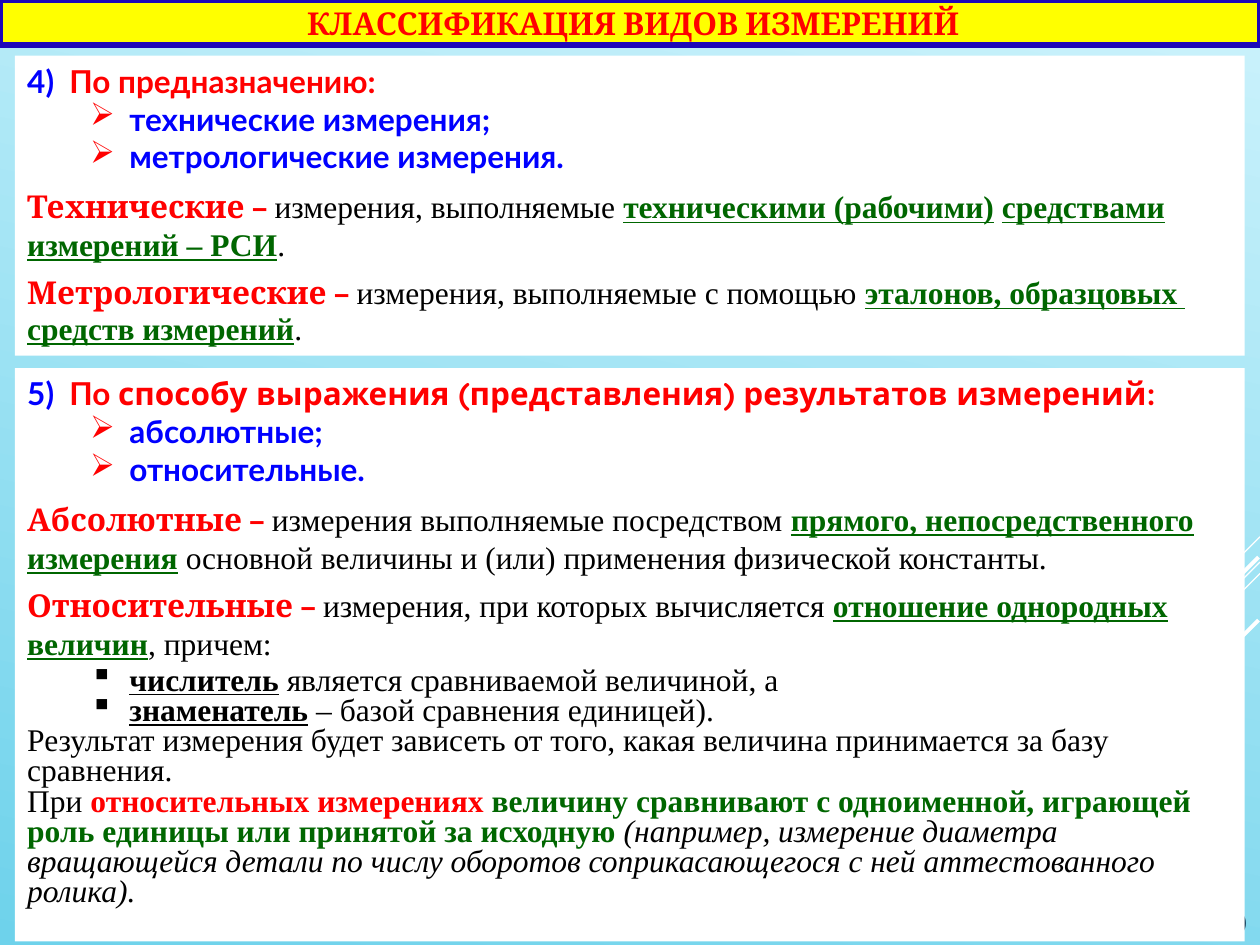
from dataclasses import dataclass
from typing import Optional

from lxml.etree import SubElement
from pptx import Presentation
from pptx.dml.color import RGBColor
from pptx.enum.shapes import MSO_CONNECTOR as Connector, MSO_SHAPE as Shape
from pptx.enum.text import MSO_ANCHOR as Anchor, MSO_AUTO_SIZE as AutoSize, PP_ALIGN as Align
from pptx.oxml.ns import qn
from pptx.util import Cm, Pt

COLORS = {
    "sky_light": "C8F1FB", "sky_deep": "6ED2EB", "white": "FFFFFF", "black": "000000",
    "yellow": "FFFF00", "navy": "1D08B8", "red": "FF0000", "blue": "0000FF",
    "green": "006600", "ink": "0A304A",
}
SERIF = "Times New Roman"


@dataclass(frozen=True)
class Style:
    font: str
    color: str
    bold: bool = False
    underline: bool = False
    italic: bool = False
    size: float = 18


@dataclass(frozen=True)
class Para:
    runs: tuple
    bullet: Optional[str] = None
    bullet_color: Optional[str] = None
    align: Align = Align.LEFT
    spacing: Optional[float] = None
    before: float = 0
    after: float = 0


@dataclass(frozen=True)
class Panel:
    top: float
    height: float
    paras: tuple


@dataclass(frozen=True)
class Ray:
    x1: float
    y1: float
    x2: float
    y2: float
    width: float


NUMBER = Style("Lato", "blue", bold=True)
HEADING = Style("Lato", "red", bold=True)
HEADING_WIDE = Style("Quicksand", "red", bold=True)
TERM = Style("Cambria", "red", bold=True)
BODY = Style(SERIF, "black")
KEY = Style(SERIF, "green", bold=True, underline=True)
KEY_PLAIN = Style(SERIF, "green", bold=True)
PART = Style(SERIF, "black", bold=True, underline=True)
ACCENT = Style(SERIF, "red", bold=True)
EXAMPLE = Style(SERIF, "black", italic=True)
PAGE = Style("Quicksand", "ink", size=16)


def kind(text: str) -> Para:
    """Return an arrow-bulleted kind of measurement."""
    return Para(((text, NUMBER),), bullet="➢", bullet_color="red")


def definition(*runs: tuple, before: float = 3, align: Align = Align.LEFT) -> Para:
    """Return a definition paragraph."""
    return Para(runs, before=before, after=3, align=align)


def tight(*runs: tuple, bullet: Optional[str] = None, align: Align = Align.LEFT) -> Para:
    """Return a paragraph with reduced line spacing."""
    return Para(runs, bullet=bullet, align=align, spacing=0.8)


RAYS = (
    Ray(25.4, 10.82, 23.29, 12.93, 0.75),
    Ray(25.4, 11.33, 18.54, 18.21, 0.75),
    Ray(25.4, 11.56, 21.03, 15.93, 0.75),
    Ray(25.37, 11.23, 21.39, 15.21, 2.25),
    Ray(25.37, 12.5, 22.48, 15.39, 2.25),
)
PANELS = (
    Panel(1.12, 6.05, (
        Para((("4)\u00a0\u00a0", NUMBER), ("По предназначению:", HEADING))),
        kind("технические измерения;"),
        kind("метрологические измерения."),
        definition(("Технические – ", TERM), ("измерения, выполняемые ", BODY),
                   ("техническими (рабочими)", KEY), (" ", KEY_PLAIN),
                   ("средствами измерений – РСИ", KEY), (".", BODY), before=7),
        definition(("Метрологические – ", TERM), ("измерения, выполняемые с помощью ", BODY),
                   ("эталонов, образцовых ", KEY), align=Align.JUSTIFY),
        tight(("средств измерений", KEY), (".", BODY), align=Align.JUSTIFY),
    )),
    Panel(7.42, 11.56, (
        Para((("5)\u00a0\u00a0", NUMBER), ("По ", HEADING),
              ("способу выражения (представления) результатов измерений", HEADING_WIDE),
              (":", HEADING))),
        kind("абсолютные;"),
        kind("относительные."),
        definition(("Абсолютные – ", TERM), ("измерения выполняемые посредством ", BODY),
                   ("прямого, непосредственного измерения", KEY), (" ", KEY_PLAIN),
                   ("основной величины и (или) применения физической константы.", BODY), before=7),
        definition(("Относительные – ", TERM), ("измерения, при которых вычисляется ", BODY),
                   ("отношение однородных величин", KEY), (", причем:", BODY)),
        tight(("числитель", PART), (" является сравниваемой величиной, а", BODY), bullet="▪"),
        tight(("знаменатель", PART), (" – базой сравнения единицей).", BODY), bullet="▪"),
        tight(("Результат измерения будет зависеть от того, какая величина "
               "принимается за базу сравнения.", BODY)),
        tight(("При\u00a0", BODY), ("относительных\u00a0измерениях ", ACCENT),
              ("величину сравнивают с одноименной, играющей роль единицы "
               "или принятой за исходную ", KEY_PLAIN),
              ("(например, измерение диаметра вращающейся детали по числу оборотов "
               "соприкасающегося с ней аттестованного ролика).", EXAMPLE)),
    )),
)


def rgb(name: str) -> RGBColor:
    """Return the named colour."""
    return RGBColor.from_string(COLORS[name])


def set_bullet(paragraph, char: str, color: Optional[str]) -> None:
    """Give the paragraph a hanging bullet."""
    paragraph.level = 1
    props = paragraph._p.get_or_add_pPr()
    props.set("marL", str(Cm(2.06)))
    props.set("indent", str(Cm(-0.79)))
    if color:
        SubElement(SubElement(props, qn("a:buClr")), qn("a:srgbClr")).set("val", COLORS[color])
    SubElement(props, qn("a:buChar")).set("char", char)


def write(frame, paras: tuple) -> None:
    """Fill a text frame with styled paragraphs."""
    for index, para in enumerate(paras):
        paragraph = frame.add_paragraph() if index else frame.paragraphs[0]
        paragraph.alignment = para.align
        paragraph.space_before, paragraph.space_after = Pt(para.before), Pt(para.after)
        if para.spacing:
            paragraph.line_spacing = para.spacing
        if para.bullet:
            set_bullet(paragraph, para.bullet, para.bullet_color)
        for text, style in para.runs:
            run = paragraph.add_run()
            run.text = text
            font = run.font
            font.name, font.size, font.color.rgb = style.font, Pt(style.size), rgb(style.color)
            font.bold, font.italic, font.underline = style.bold, style.italic, style.underline


def add_box(slide, left: float, top: float, width: float, height: float, fill: str):
    """Add a plain filled rectangle without an outline."""
    box = slide.shapes.add_shape(Shape.RECTANGLE, Cm(left), Cm(top), Cm(width), Cm(height))
    box.shadow.inherit = False
    box.fill.solid()
    box.fill.fore_color.rgb = rgb(fill)
    box.line.fill.background()
    return box


def add_ray(slide, ray: Ray) -> None:
    """Add a white decorative line."""
    line = slide.shapes.add_connector(
        Connector.STRAIGHT, Cm(ray.x1), Cm(ray.y1), Cm(ray.x2), Cm(ray.y2))
    line.line.color.rgb = rgb("white")
    line.line.width = Pt(ray.width)
    SubElement(line._element.spPr, qn("a:effectLst"))


def add_panel(slide, panel: Panel) -> None:
    """Add a white panel with its text."""
    frame = add_box(slide, 0.3, panel.top, 24.79, panel.height, "white").text_frame
    frame.word_wrap = True
    frame.auto_size = AutoSize.SHAPE_TO_FIT_TEXT
    frame.vertical_anchor = Anchor.TOP
    write(frame, panel.paras)


def main() -> None:
    """Build and save the slide."""
    deck = Presentation()
    deck.slide_width, deck.slide_height = Cm(25.4), Cm(19.05)
    slide = deck.slides.add_slide(deck.slide_layouts[6])
    sky = slide.background.fill
    sky.gradient()
    sky.gradient_angle = 258
    for stop, color, position in zip(sky.gradient_stops, ("sky_light", "sky_deep"), (0.04, 1)):
        stop.color.rgb, stop.position = rgb(color), position
    for ray in RAYS:
        add_ray(slide, ray)

    page = slide.shapes.add_textbox(Cm(23.01), Cm(17.2), Cm(2.39), Cm(1.85)).text_frame
    page.word_wrap = True
    page.vertical_anchor = Anchor.BOTTOM
    write(page, (Para((("10", PAGE),), align=Align.RIGHT),))

    title = add_box(slide, 0, 0, 25.4, 0.91, "yellow")
    title.line.color.rgb = rgb("navy")
    title.line.width = Pt(3)
    title.text_frame.word_wrap = False
    title.text_frame.vertical_anchor = Anchor.MIDDLE
    write(title.text_frame, (Para(((" КЛАССИФИКАЦИЯ ВИДОВ ИЗМЕРЕНИЙ", TERM),), align=Align.CENTER),))

    for panel in PANELS:
        add_panel(slide, panel)
    deck.save("out.pptx")


if __name__ == "__main__":
    main()
